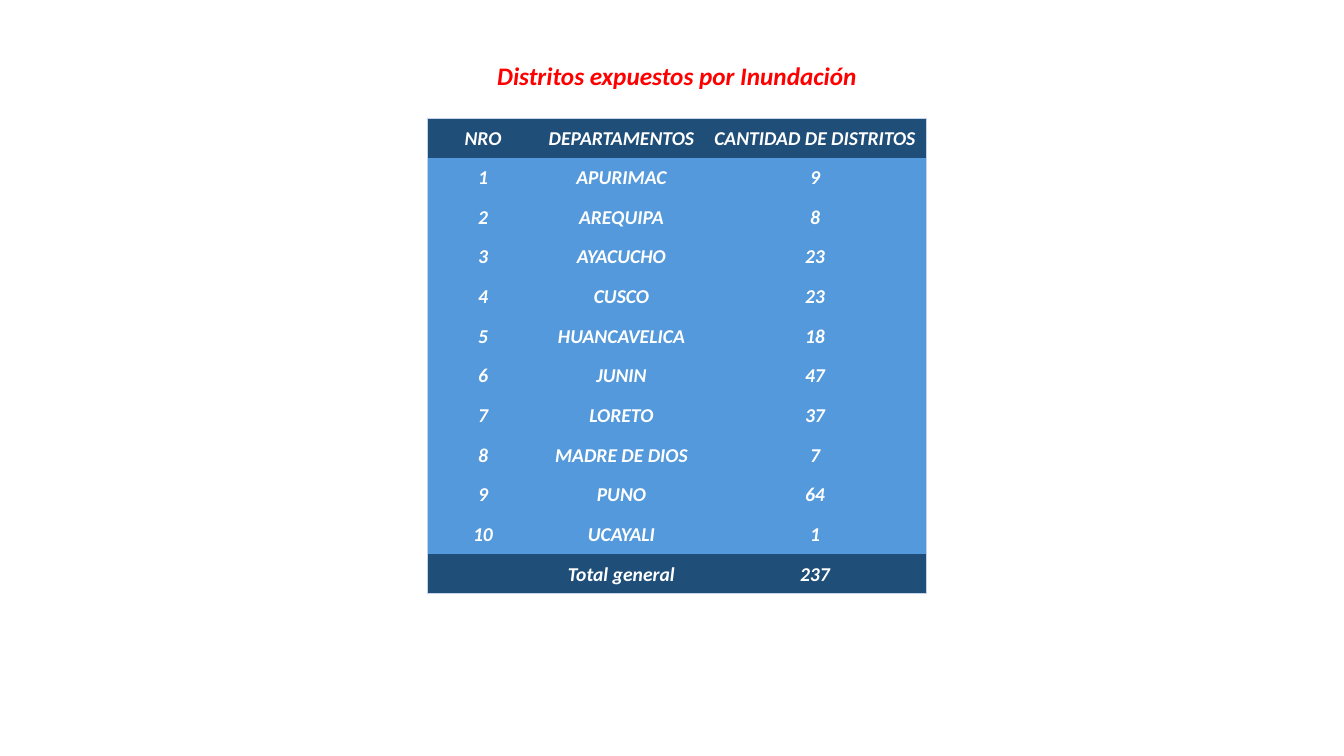
from lxml import etree
from pptx import Presentation
from pptx.dml.color import RGBColor
from pptx.enum.text import MSO_ANCHOR, MSO_AUTO_SIZE, PP_ALIGN
from pptx.oxml.ns import qn
from pptx.util import Emu, Pt

CENTER = PP_ALIGN.CENTER
TOP = MSO_ANCHOR.TOP
MIDDLE = MSO_ANCHOR.MIDDLE
FIT_SHAPE = MSO_AUTO_SIZE.SHAPE_TO_FIT_TEXT

RED = RGBColor(0xFF, 0x00, 0x00)
WHITE = RGBColor(0xFF, 0xFF, 0xFF)
NAVY = RGBColor(0x1F, 0x4E, 0x79)
BLUE = RGBColor(0x53, 0x99, 0xDB)
PALE_BLUE = RGBColor(0xC4, 0xD5, 0xEB)

FONT = "Calibri"
TITLE_ONLY = 5
SLIDE_SIZE = (1344, 756)
TITLE_BOX = (485, 55, 384, 40)
TABLE_BOX = (427, 118, 499, 476)
COLUMN_WIDTHS = (112, 165, 222)

HEADER = ("NRO", "DEPARTAMENTOS", "CANTIDAD DE DISTRITOS")
DISTRICTS = (
    ("APURIMAC", 9),
    ("AREQUIPA", 8),
    ("AYACUCHO", 23),
    ("CUSCO", 23),
    ("HUANCAVELICA", 18),
    ("JUNIN", 47),
    ("LORETO", 37),
    ("MADRE DE DIOS", 7),
    ("PUNO", 64),
    ("UCAYALI", 1),
)


def px(length):
    """Turn pixels into EMU."""
    return Emu(round(length * 914400 / 100.8))


def format_text(text_frame, size, color):
    """Centre the text and set it in bold italics."""
    for paragraph in text_frame.paragraphs:
        paragraph.alignment = CENTER
        for run in paragraph.runs:
            run.font.name = FONT
            run.font.size = Pt(size)
            run.font.bold = True
            run.font.italic = True
            run.font.color.rgb = color


def set_borders(cell, outer_sides):
    """Draw the outer sides of a cell and clear the others."""
    properties = cell._tc.get_or_add_tcPr()
    for position, side in enumerate("LRTB"):
        border = etree.Element(qn(f"a:ln{side}"), w=str(Pt(0.5)))
        if side in outer_sides:
            fill = etree.SubElement(border, qn("a:solidFill"))
            etree.SubElement(fill, qn("a:srgbClr"), val=str(PALE_BLUE))
        else:
            etree.SubElement(border, qn("a:noFill"))
        properties.insert(position, border)


def add_title(slide, box):
    """Place the heading in the title placeholder."""
    title = slide.shapes.title
    title.left, title.top, title.width, title.height = map(px, box)
    frame = title.text_frame
    frame.text = "Distritos expuestos por Inundación"
    frame.word_wrap = False
    frame.auto_size = FIT_SHAPE
    frame.vertical_anchor = TOP
    format_text(frame, 18, RED)


def add_district_table(slide, box):
    """Place the table of departments with its header and total."""
    numbered = [(number, *district) for number, district in enumerate(DISTRICTS, 1)]
    total = ("", "Total general", sum(count for _, count in DISTRICTS))
    records = [HEADER, *numbered, total]
    last_row, last_column = len(records) - 1, len(HEADER) - 1

    table = slide.shapes.add_table(len(records), len(HEADER), *map(px, box)).table
    table.first_row = False
    table.horz_banding = False
    for column, width in zip(table.columns, COLUMN_WIDTHS):
        column.width = px(width)

    for row_index, record in enumerate(records):
        table.rows[row_index].height = px(box[3] / len(records))
        for column_index, value in enumerate(record):
            cell = table.cell(row_index, column_index)
            cell.text_frame.text = str(value)
            cell.vertical_anchor = MIDDLE
            cell.margin_left = cell.margin_right = cell.margin_top = px(1)
            cell.margin_bottom = 0
            cell.fill.solid()
            cell.fill.fore_color.rgb = NAVY if row_index in (0, last_row) else BLUE
            format_text(cell.text_frame, 14, WHITE)
            edges = {
                "L": column_index == 0,
                "R": column_index == last_column,
                "T": row_index == 0,
                "B": row_index == last_row,
            }
            set_borders(cell, [side for side, outer in edges.items() if outer])


def main():
    """Build the slide and save it."""
    presentation = Presentation()
    presentation.slide_width, presentation.slide_height = map(px, SLIDE_SIZE)
    slide = presentation.slides.add_slide(presentation.slide_layouts[TITLE_ONLY])
    add_title(slide, TITLE_BOX)
    add_district_table(slide, TABLE_BOX)
    presentation.save("out.pptx")


if __name__ == "__main__":
    main()
